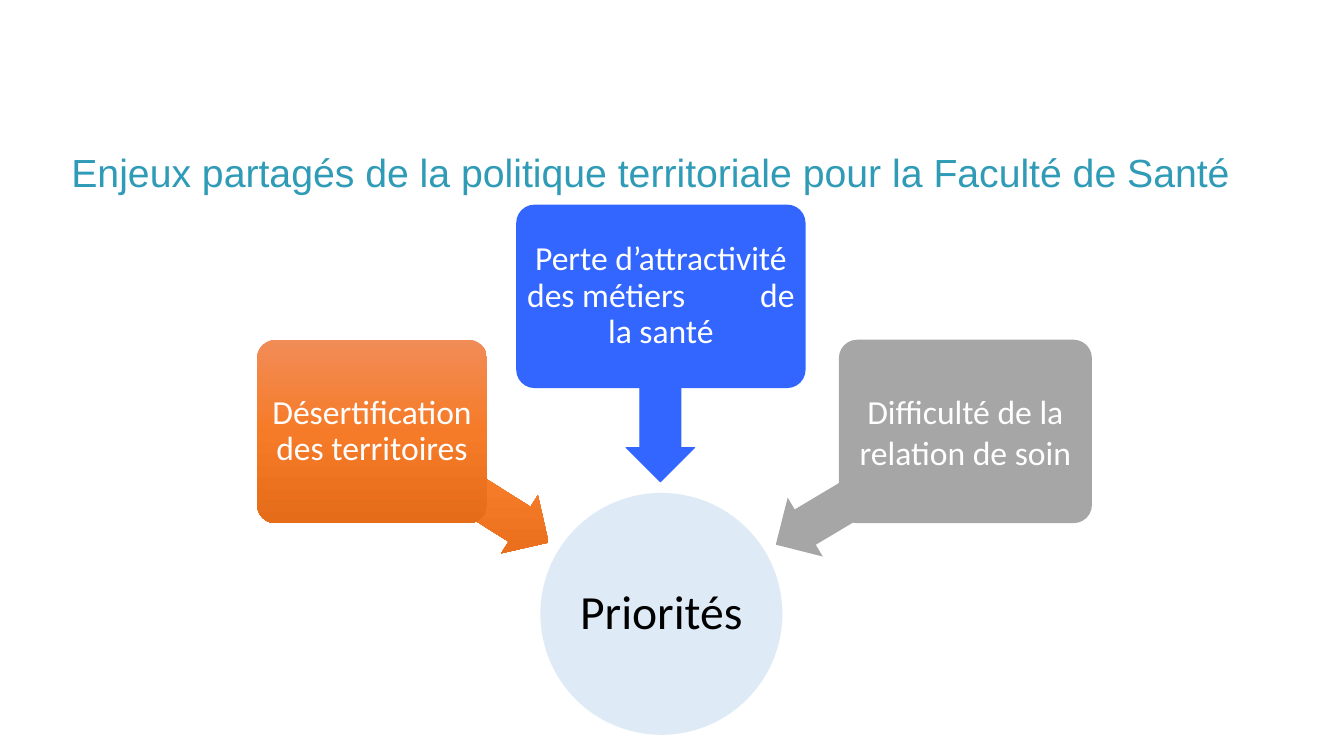
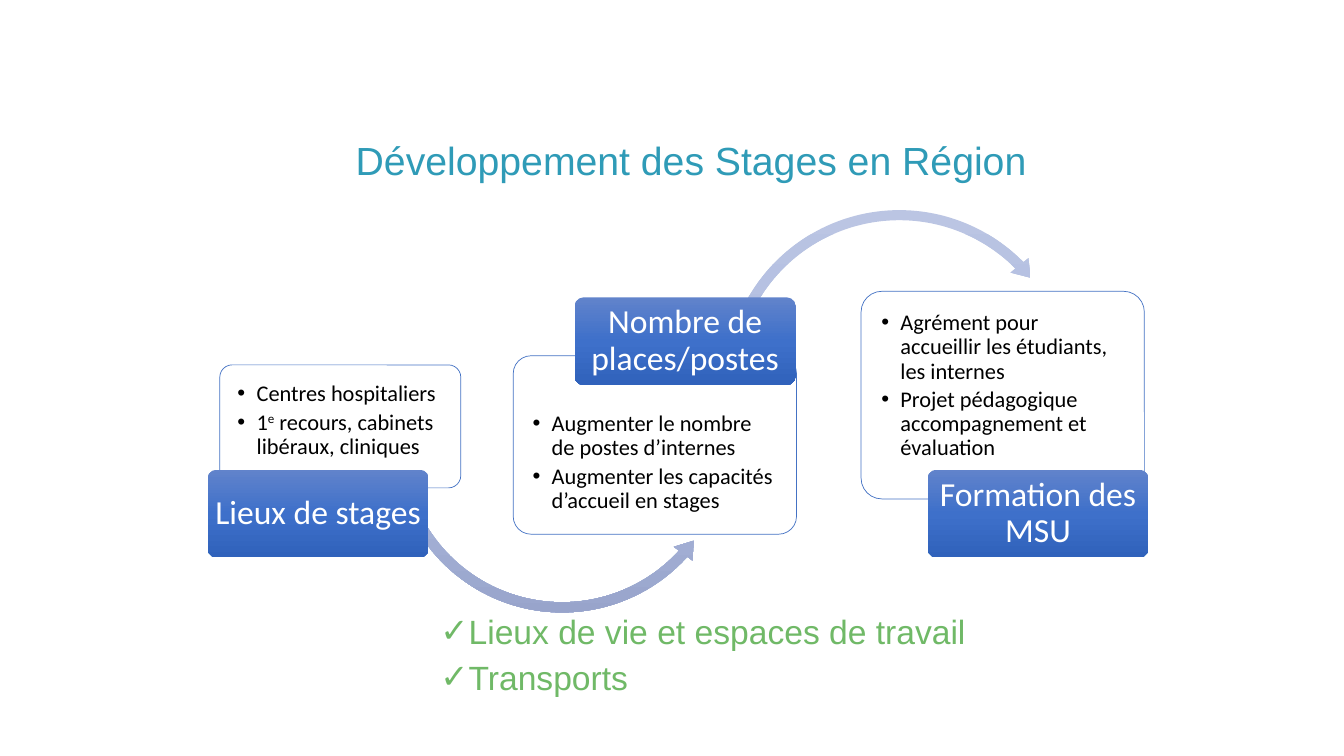
from lxml import etree
from pptx import Presentation
from pptx.dml.color import RGBColor
from pptx.enum.shapes import MSO_SHAPE
from pptx.enum.text import MSO_ANCHOR, PP_ALIGN
from pptx.oxml import parse_xml
from pptx.oxml.ns import nsdecls, qn
from pptx.util import Inches, Pt

ROUNDED, ELLIPSE = MSO_SHAPE.ROUNDED_RECTANGLE, MSO_SHAPE.OVAL
LEFT_ARROW = MSO_SHAPE.LEFT_ARROW
ARC_OVER, ARC_UNDER = MSO_SHAPE.CIRCULAR_ARROW, MSO_SHAPE.LEFT_CIRCULAR_ARROW
LEFT, CENTER = PP_ALIGN.LEFT, PP_ALIGN.CENTER
TOP, MIDDLE = MSO_ANCHOR.TOP, MSO_ANCHOR.MIDDLE

COLORS = {
    "title": "2F9BB7", "green": "70B967", "black": "000000", "white": "FFFFFF",
    "pale_blue": "DEEBF7", "bright_blue": "3366FF", "gray": "A6A6A6", "outline": "4472C4",
}
GRADIENTS = {
    "orange": ("F18C57", "F67B28", "E56C19"),
    "tag": ("6183CB", "3E70CA", "3062BB"),
    "arc": ("BBC5E3", "AEBBE0", "98A4CB"),
}


def color(name):
    return RGBColor.from_string(COLORS[name])


def fill_gradient(shape, stops):
    """Fill from top to bottom with three stops, whatever the rotation of the shape."""
    shape.fill.background()
    properties = shape.element.spPr
    marks = "".join(
        f'<a:gs pos="{index * 50000}"><a:srgbClr val="{value}"/></a:gs>'
        for index, value in enumerate(stops))
    properties.replace(properties.find(qn("a:noFill")), parse_xml(
        f'<a:gradFill {nsdecls("a")} rotWithShape="0"><a:gsLst>{marks}</a:gsLst>'
        '<a:lin ang="5400000" scaled="0"/></a:gradFill>'))


def add_shape(slide, kind, left, top, width, height, fill, line=None, line_width=0.75,
              adjustments=(), rotation=0, opacity=100):
    shape = slide.shapes.add_shape(
        kind, Inches(left), Inches(top), Inches(width), Inches(height))
    shape.shadow.inherit = False
    shape.rotation = rotation
    for index, value in enumerate(adjustments):
        shape.adjustments[index] = value
    if fill in GRADIENTS:
        fill_gradient(shape, GRADIENTS[fill])
    else:
        shape.fill.solid()
        shape.fill.fore_color.rgb = color(fill)
        if opacity < 100:
            tint = shape.element.spPr.find(qn("a:solidFill"))[0]
            etree.SubElement(tint, qn("a:alpha")).set("val", str(opacity * 1000))
    if line:
        shape.line.color.rgb = color(line)
        shape.line.width = Pt(line_width)
    else:
        shape.line.fill.background()
    return shape


def set_bullet(paragraph, character, indent):
    properties = paragraph._p.get_or_add_pPr()
    properties.set("marL", str(Inches(indent)))
    properties.set("indent", str(-Inches(indent)))
    etree.SubElement(properties, qn("a:buFont")).set("typeface", "Arial")
    etree.SubElement(properties, qn("a:buChar")).set("char", character)


def write_text(shape, paragraphs, size=24, font="Calibri", ink="white", align=CENTER,
               anchor=MIDDLE, insets=(0.05, 0.05, 0.05, 0.05), spacing=0.9,
               before=0, after=0, bullet=None, indent=0):
    """Each paragraph is a string or a list of (text, run attributes) pairs."""
    frame = shape.text_frame
    frame.word_wrap = True
    frame.vertical_anchor = anchor
    (frame.margin_left, frame.margin_top,
     frame.margin_right, frame.margin_bottom) = map(Inches, insets)
    for index, content in enumerate(paragraphs):
        paragraph = frame.add_paragraph() if index else frame.paragraphs[0]
        paragraph.alignment = align
        paragraph.line_spacing = spacing
        paragraph.space_before = Pt(before if index else 0)
        paragraph.space_after = Pt(after)
        if bullet:
            set_bullet(paragraph, bullet, indent)
        runs = [(content, {})] if isinstance(content, str) else content
        for text, attributes in runs:
            run = paragraph.add_run()
            run.text = text
            run.font.size = Pt(size)
            run.font.name = font
            run.font.color.rgb = color(ink)
            for key, value in attributes.items():
                run.font._element.set(key, value)


def add_text(slide, left, top, width, height, paragraphs, **text_format):
    box = slide.shapes.add_textbox(Inches(left), Inches(top), Inches(width), Inches(height))
    write_text(box, paragraphs, font="Arial", align=LEFT,
               insets=(0.1, 0.05, 0.1, 0.05), **text_format)


def add_title_slide(presentation, title, left, top, width, height):
    slide = presentation.slides.add_slide(presentation.slide_layouts[6])
    add_text(slide, left, top, width, height, [title], size=28, ink="title")
    return slide


def draw_priorities(slide, left, top):
    """Three challenges, each with an arrow to the central circle."""
    circle = add_shape(slide, ELLIPSE, left + 2.81, top + 2.86, 2.4, 2.4, "pale_blue")
    write_text(circle, ["Priorités"], size=34, ink="black", insets=(0.02,) * 4)
    attractiveness = [("Perte d’attractivité des métiers", {}), (" ", {"spc": "4800"}),
                      ("de la santé", {})]
    challenges = [
        ("Désertification des territoires", "orange", None, 0.9,
         (0, 1.34, 2.28), (0.98, 2.46, 2.07, 212.2)),
        (attractiveness, "bright_blue", "bright_blue", 0.9,
         (2.57, 0, 2.87), (3.08, 1.49, 1.84, 270)),
        ("Difficulté de la relation de soin", "gray", None, 1,
         (5.77, 1.34, 2.51), (4.99, 2.47, 2.2, 329.2)),
    ]
    for text, fill, line, spacing, (x, y, width), arrow in challenges:
        arrow_x, arrow_y, length, rotation = arrow
        add_shape(slide, LEFT_ARROW, left + arrow_x, top + arrow_y, length, 0.68, fill,
                  line=line, adjustments=(0.6, 0.5), rotation=rotation)
        box = add_shape(slide, ROUNDED, left + x, top + y, width, 1.82, fill,
                        adjustments=(0.1,))
        write_text(box, [text], spacing=spacing)


def draw_stage_card(slide, left, top, width, height, name, details, tag, arc=None):
    """Detail box with its name tag and an optional arc; both are offset from the box."""
    card = add_shape(slide, ROUNDED, left, top, width, height, "white", line="outline",
                     line_width=0.5, adjustments=(0.1,), opacity=90)
    tag_x, tag_y = tag
    inset_top = 0.51 if tag_y < 0 else 0.14
    write_text(card, details, size=16, ink="black", align=LEFT, anchor=TOP, after=3,
               insets=(0.14, inset_top, 0.14, 0.14), bullet="•", indent=0.19)
    if arc:
        kind, arc_x, arc_y, diameter, adjustments = arc
        add_shape(slide, kind, left + arc_x, top + arc_y, diameter, diameter, "arc",
                  adjustments=adjustments)
    label = add_shape(slide, ROUNDED, left + tag_x, top + tag_y, 2.19, 0.87, "tag",
                      adjustments=(0.1,))
    write_text(label, [name], insets=(0.05, 0.03, 0.05, 0.03))


def build_priorities_slide(presentation):
    slide = add_title_slide(
        presentation, "Enjeux partagés de la politique territoriale pour la Faculté de Santé",
        0.61, 1.11, 12.27, 1.25)
    draw_priorities(slide, 2.55, 2.03)


def build_stages_slide(presentation):
    slide = add_title_slide(presentation, "Développement des Stages en Région",
                            3.43, 1.18, 9, 0.87)
    add_text(slide, 4.27, 6.09, 7.21, 0.92,
             ["Lieux de vie et espaces de travail", "Transports"],
             ink="green", anchor=TOP, spacing=0.8, before=10, bullet="✓", indent=0.25)
    first_care = [("1", {}), ("e", {"baseline": "30000"}),
                  (" recours, cabinets libéraux, cliniques", {})]
    draw_stage_card(
        slide, 2.18, 3.62, 2.39, 1.22, "Lieux de stages",
        ["Centres hospitaliers", first_care], tag=(-0.12, 1.04),
        arc=(ARC_UNDER, 1.66, -0.95, 3.47, (0.029, 3.503, 25.313, 94.299, 0.033)))
    draw_stage_card(
        slide, 5.09, 3.53, 2.81, 1.77, "Nombre de places/postes",
        ["Augmenter le nombre de postes d’internes",
         "Augmenter les capacités d’accueil en stages"], tag=(0.61, -0.58),
        arc=(ARC_OVER, 2.04, -1.51, 3.58, (0.028, 3.395, 189.203, 120.108, 0.032)))
    draw_stage_card(
        slide, 8.54, 2.89, 2.81, 2.06, "Formation des MSU",
        ["Agrément pour accueillir les étudiants, les internes",
         "Projet pédagogique accompagnement et évaluation"], tag=(0.66, 1.77))


def main():
    presentation = Presentation()
    presentation.slide_width = Inches(13.33)
    presentation.slide_height = Inches(7.5)
    build_priorities_slide(presentation)
    build_stages_slide(presentation)
    presentation.save("out.pptx")


if __name__ == "__main__":
    main()
